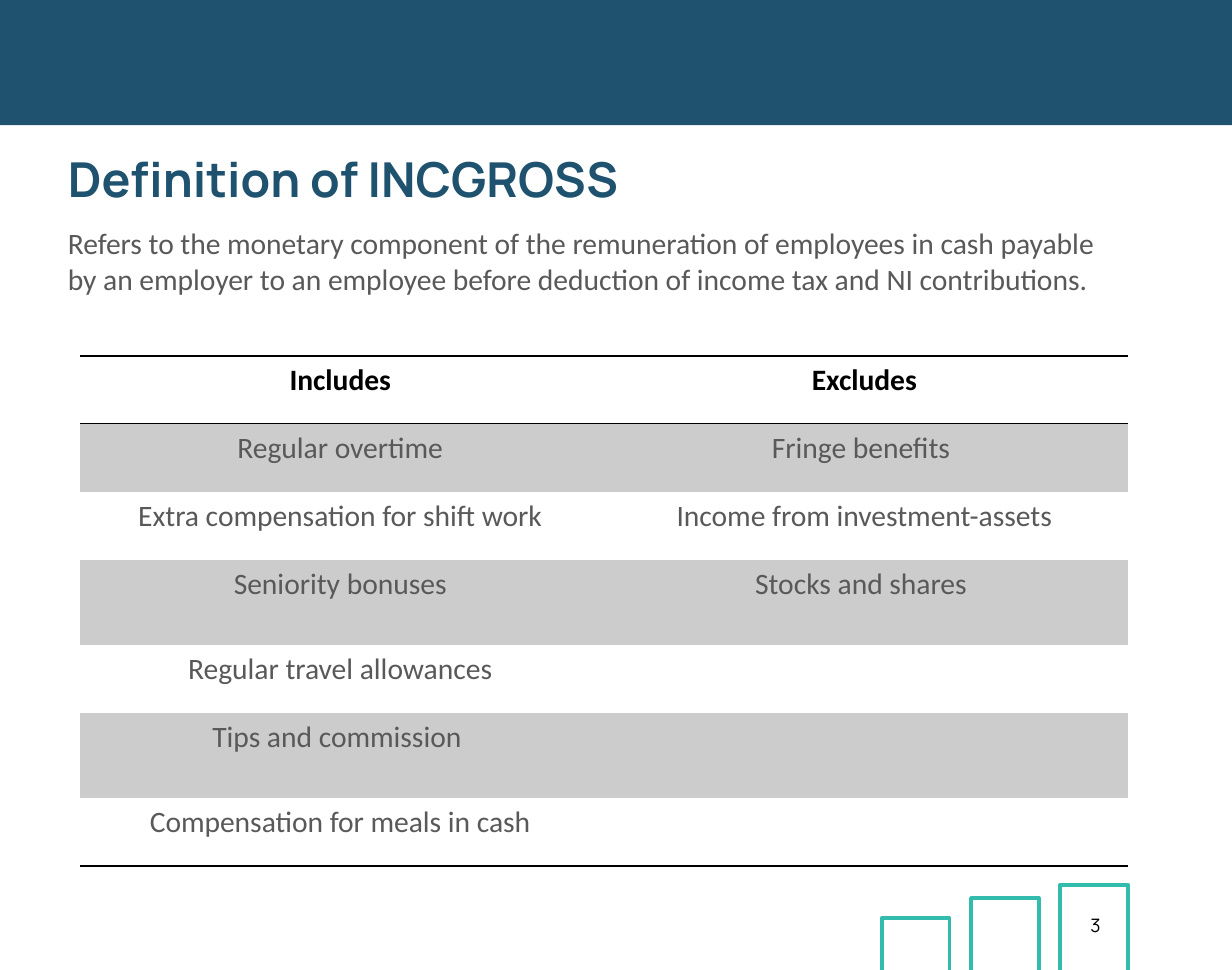
from lxml import etree
from pptx import Presentation
from pptx.dml.color import RGBColor
from pptx.enum.shapes import MSO_SHAPE
from pptx.enum.text import PP_ALIGN
from pptx.oxml.ns import qn
from pptx.util import Inches, Pt

RECTANGLE = MSO_SHAPE.RECTANGLE
CENTER = PP_ALIGN.CENTER
LEFT = PP_ALIGN.LEFT

COLORS = {
    "navy": "1E526E",
    "teal": "32BCAD",
    "gray": "595959",
    "band": "CCCCCC",
    "black": "000000",
}
PLAIN_TABLE_STYLE = "{2D5ABB26-0587-4C30-8999-92F81FD0307C}"
ROWS = [
    ("Includes", "Excludes"),
    ("Regular overtime", "Fringe benefits "),
    ("Extra compensation for shift work", "Income from investment-assets"),
    ("Seniority bonuses", "Stocks and shares "),
    ("Regular travel allowances", ""),
    ("Tips and commission ", ""),
    ("Compensation for meals in cash", ""),
]
COLUMN_WIDTHS = [3.91, 3.96]
ROW_HEIGHTS = [0.51, 0.51, 0.51, 0.64, 0.51, 0.64, 0.51]
BAR_TOPS = [6.89, 6.74, 6.64]


def color(name):
    return RGBColor.from_string(COLORS[name])


def add_rectangle(slide, left, top, width, height, fill=None, line=None):
    shape = slide.shapes.add_shape(
        RECTANGLE, Inches(left), Inches(top), Inches(width), Inches(height))
    shape.shadow.inherit = False
    if fill:
        shape.fill.solid()
        shape.fill.fore_color.rgb = color(fill)
    else:
        shape.fill.background()
    if line:
        shape.line.color.rgb = color(line)
        shape.line.width = Pt(2)
    else:
        shape.line.fill.background()


def add_text_frame(slide, left, top, width, height):
    box = slide.shapes.add_textbox(
        Inches(left), Inches(top), Inches(width), Inches(height))
    frame = box.text_frame
    frame.word_wrap = True
    frame.margin_left = frame.margin_right = Inches(0)
    frame.margin_top = frame.margin_bottom = Inches(0)
    return frame


def write(paragraph, text, size, font, text_color, bold=False, align=LEFT):
    paragraph.alignment = align
    run = paragraph.add_run()
    run.text = text
    run.font.size = Pt(size)
    run.font.name = font
    run.font.bold = bold
    run.font.color.rgb = color(text_color)


def add_border(cell, side):
    properties = cell._tc.get_or_add_tcPr()
    border = etree.Element(qn(f"a:{side}"), w=str(Pt(1)))
    fill = etree.SubElement(border, qn("a:solidFill"))
    etree.SubElement(fill, qn("a:srgbClr"), val=COLORS["black"])
    position = len(properties.findall(qn("a:lnT")))
    properties.insert(position, border)


def fill_cell(cell, text, row):
    is_header = row == 0
    if row % 2:
        cell.fill.solid()
        cell.fill.fore_color.rgb = color("band")
    else:
        cell.fill.background()
    if text:
        write(cell.text_frame.paragraphs[0], text, 16, "Calibri",
              "black" if is_header else "gray", is_header, CENTER)
    if is_header:
        add_border(cell, "lnT")
    if is_header or row == len(ROWS) - 1:
        add_border(cell, "lnB")


def add_income_table(slide):
    frame = slide.shapes.add_table(
        len(ROWS), len(COLUMN_WIDTHS), Inches(0.6), Inches(2.67),
        Inches(sum(COLUMN_WIDTHS)), Inches(sum(ROW_HEIGHTS)))
    table = frame.table
    table.first_row = False
    table.horz_banding = False
    table._tbl.tblPr.find(qn("a:tableStyleId")).text = PLAIN_TABLE_STYLE
    for column, width in zip(table.columns, COLUMN_WIDTHS):
        column.width = Inches(width)
    for row, (texts, height) in enumerate(zip(ROWS, ROW_HEIGHTS)):
        table.rows[row].height = Inches(height)
        for column, text in enumerate(texts):
            fill_cell(table.cell(row, column), text, row)


def add_definition(slide):
    frame = add_text_frame(slide, 0.51, 1.12, 7.96, 1.2)
    title = frame.paragraphs[0]
    title.space_after = Pt(10)
    write(title, "Definition of INCGROSS", 26, "Manrope", "navy", True)
    write(frame.add_paragraph(),
          "Refers to the monetary component of the remuneration of employees "
          "in cash payable by an employer to an employee before deduction of "
          "income tax and NI contributions.", 16, "Calibri", "gray")


def add_page_number(slide):
    frame = add_text_frame(slide, 7.97, 6.83, 0.51, 0.19)
    paragraph = frame.paragraphs[0]
    paragraph.line_spacing = Pt(14.2)
    write(paragraph, "3", 10, "Manrope", "black", align=CENTER)


def main():
    presentation = Presentation()
    presentation.slide_width = Inches(9.25)
    presentation.slide_height = Inches(7.28)
    slide = presentation.slides.add_slide(presentation.slide_layouts[6])
    add_rectangle(slide, -0.17, -0.11, 9.63, 1.05, fill="navy")
    for index, top in enumerate(BAR_TOPS):
        add_rectangle(slide, 6.62 + 0.67 * index, top, 0.51, 0.81, line="teal")
    add_definition(slide)
    add_page_number(slide)
    add_income_table(slide)
    presentation.save("out.pptx")


if __name__ == "__main__":
    main()
